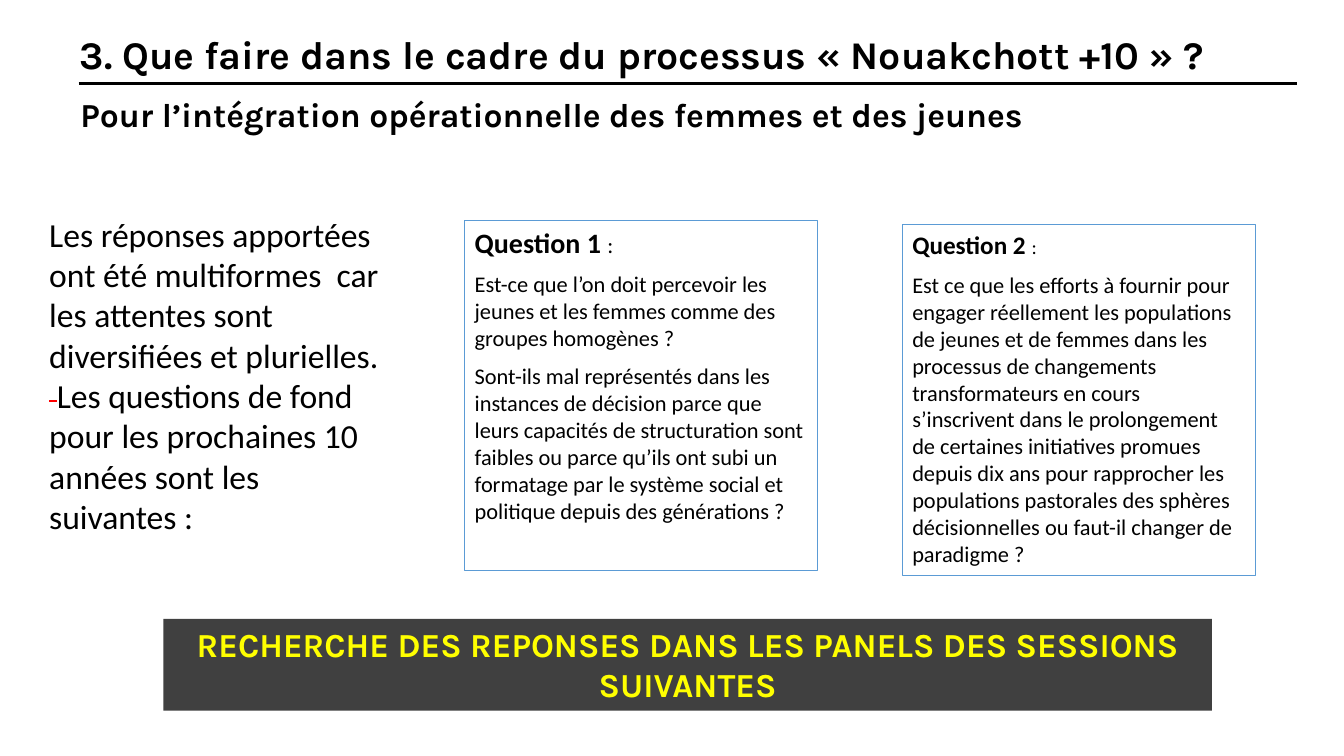
from lxml import etree
from pptx import Presentation
from pptx.dml.color import RGBColor
from pptx.enum.shapes import MSO_CONNECTOR, MSO_SHAPE
from pptx.enum.text import MSO_ANCHOR, MSO_AUTO_SIZE, PP_ALIGN
from pptx.oxml.ns import qn
from pptx.util import Inches, Pt

RECTANGLE = MSO_SHAPE.RECTANGLE
STRAIGHT = MSO_CONNECTOR.STRAIGHT
LEFT, CENTER = PP_ALIGN.LEFT, PP_ALIGN.CENTER
TITLE_ONLY = 5
BLACK, WHITE, RED, YELLOW = "000000", "FFFFFF", "FF0000", "FFFF00"
BORDER_BLUE, BANNER_GRAY = "5B9BD5", "404040"

TITLE = "3. Que faire dans le cadre du processus « Nouakchott +10 » ?"
SUBTITLE = "Pour l’intégration opérationnelle des femmes et des jeunes"
ANSWERS = "Les réponses apportées ont été multiformes  car les attentes sont diversifiées et plurielles."
NEXT_QUESTIONS = "Les questions de fond pour les prochaines 10 années sont les suivantes :"
BANNER = "RECHERCHE DES REPONSES DANS LES PANELS DES SESSIONS SUIVANTES"
QUESTION_1 = [
    "Est-ce que l’on doit percevoir les jeunes et les femmes comme des groupes homogènes ?",
    "Sont-ils mal représentés dans les instances de décision parce que leurs capacités de "
    "structuration sont faibles ou parce qu’ils ont subi un formatage par le système social et "
    "politique depuis des générations ?",
]
QUESTION_2 = [
    "Est ce que les efforts à fournir pour engager réellement les populations de jeunes et de "
    "femmes dans les processus de changements transformateurs en cours s’inscrivent dans le "
    "prolongement de certaines initiatives promues depuis dix ans pour rapprocher les populations "
    "pastorales des sphères décisionnelles ou faut-il changer de paradigme ?",
]


def color(hex_string):
    return RGBColor.from_string(hex_string)


def text_format(size, name="Calibri", bold=False, hex_color=BLACK):
    return {"size": Pt(size), "name": name, "bold": bold, "color": hex_color}


def write(shape, paragraphs, alignment=LEFT, space_after=0):
    """Fill a shape with paragraphs, each a list of (text, format) runs."""
    frame = shape.text_frame
    frame.word_wrap = True
    frame.auto_size = MSO_AUTO_SIZE.NONE
    frame.vertical_anchor = MSO_ANCHOR.TOP
    for index, runs in enumerate(paragraphs):
        paragraph = frame.add_paragraph() if index else frame.paragraphs[0]
        paragraph.alignment = alignment
        paragraph.space_before = Pt(0)
        paragraph.space_after = Pt(space_after)
        for text, values in runs:
            run = paragraph.add_run()
            run.text = text
            for key, value in values.items():
                if key == "color":
                    run.font.color.rgb = color(value)
                elif key == "strike":
                    run._r.get_or_add_rPr().set("strike", value)
                else:
                    setattr(run.font, key, value)


def add_panel(slide, box, fill, border=None):
    panel = slide.shapes.add_shape(RECTANGLE, *map(Inches, box))
    panel.shadow.inherit = False
    panel.fill.solid()
    panel.fill.fore_color.rgb = color(fill)
    if border:
        panel.line.color.rgb = color(border)
        panel.line.width = Pt(0.75)
    else:
        panel.line.fill.background()
    return panel


def add_heading(slide, left, top, width):
    title = slide.shapes.title
    title.left, title.top = Inches(left), Inches(top)
    title.width, title.height = Inches(width), Inches(0.57)
    write(title, [[(TITLE, text_format(28, "Karla", True))]])

    rule_top = Inches(top + 0.58)
    rule = slide.shapes.add_connector(
        STRAIGHT, Inches(left + 0.09), rule_top, Inches(left + 12.17), rule_top)
    rule.line.color.rgb = color(BLACK)
    rule.line.width = Pt(2.25)
    etree.SubElement(rule._element.spPr, qn("a:effectLst"))

    subtitle = slide.shapes.add_textbox(*map(Inches, (left + 0.01, top + 0.63, 11.83, 0.5)))
    write(subtitle, [[(SUBTITLE, text_format(24, "Karla", True))]])


def add_introduction(slide, box):
    introduction = slide.shapes.add_textbox(*map(Inches, box))
    body = text_format(24)
    struck_space = {**body, "color": RED, "strike": "sngStrike"}
    write(introduction, [[(ANSWERS, body)], [(" ", struck_space), (NEXT_QUESTIONS, body)]])


def add_question(slide, box, heading, heading_size, colon_size, body):
    panel = add_panel(slide, box, WHITE, BORDER_BLUE)
    heading_runs = [(heading, text_format(heading_size, bold=True)), (":", text_format(colon_size))]
    write(panel, [heading_runs] + [[(text, text_format(16))] for text in body], space_after=8)


def add_banner(slide, box):
    banner = add_panel(slide, box, BANNER_GRAY)
    write(banner, [[(BANNER, text_format(24, "Karla", True, YELLOW))]], CENTER, 8)


def main():
    presentation = Presentation()
    presentation.slide_width, presentation.slide_height = Inches(13.33), Inches(7.5)
    slide = presentation.slides.add_slide(presentation.slide_layouts[TITLE_ONLY])
    add_heading(slide, 0.69, 0.25, 12.64)
    add_introduction(slide, (0.39, 2.07, 3.5, 3.33))
    add_question(slide, (4.61, 2.19, 3.5, 3.47), "Question 1 ", 20, 16, QUESTION_1)
    add_question(slide, (8.95, 2.23, 3.5, 3.48), "Question 2 ", 18, 14, QUESTION_2)
    add_banner(slide, (1.62, 6.14, 10.4, 0.91))
    presentation.save("out.pptx")


if __name__ == "__main__":
    main()
